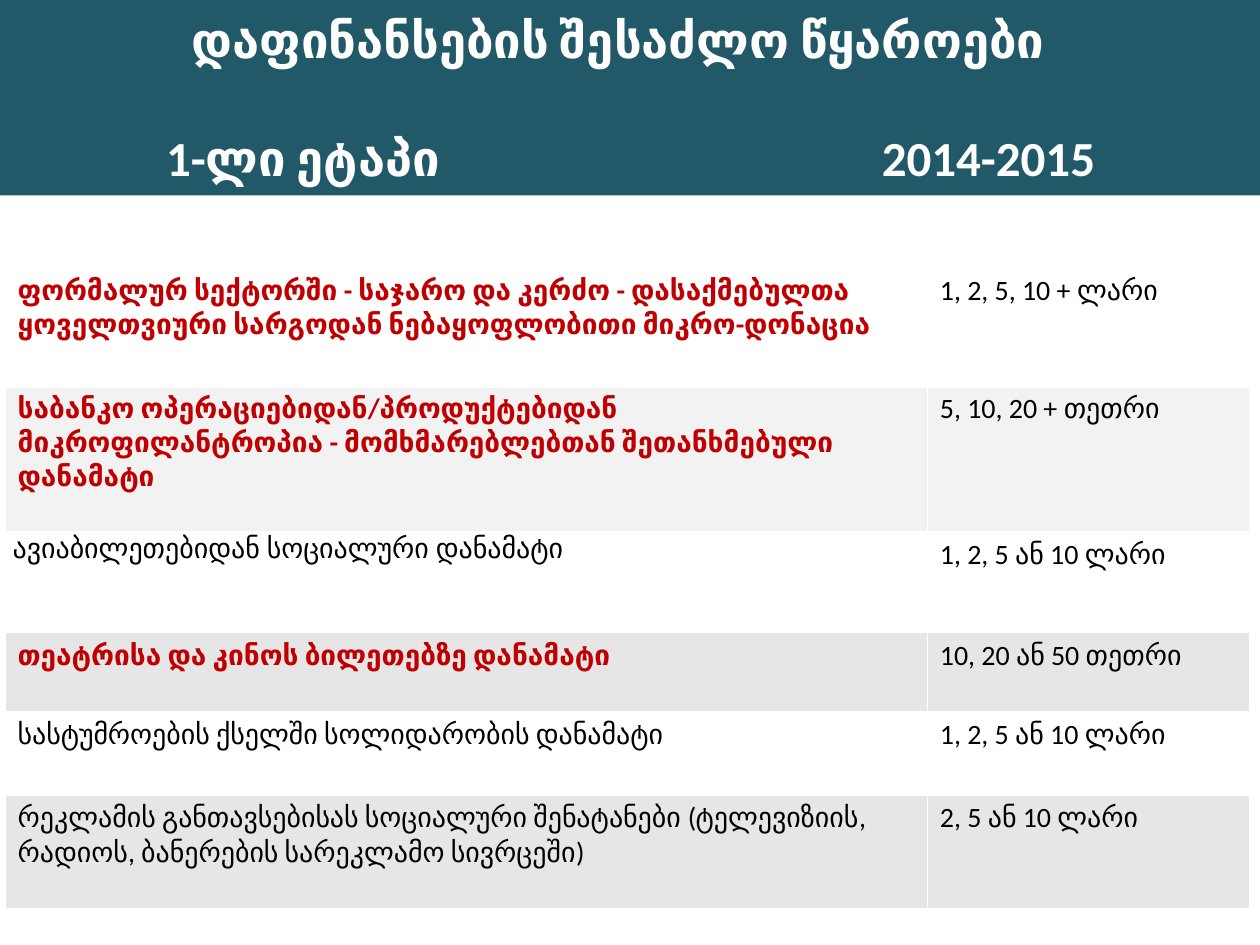
from dataclasses import dataclass

from lxml import etree
from pptx import Presentation
from pptx import util as u
from pptx.dml.color import RGBColor
from pptx.enum import shapes, text
from pptx.oxml import ns

WHITE = RGBColor(0xFF, 0xFF, 0xFF)
BLACK = RGBColor(0, 0, 0)
TEAL = RGBColor(0x21, 0x59, 0x68)
RED = RGBColor(0xC0, 0, 0)
PALE = RGBColor(0xF2, 0xF2, 0xF2)
GREY = RGBColor(0xE6, 0xE6, 0xE6)

COLUMN_WIDTHS = (7.32, 2.56)
TAB_STOPS = (1.22, 6.9)


@dataclass
class Source:
    name: str
    amount: str
    height: float
    fill: RGBColor = WHITE
    key: bool = False
    font: str = "Calibri"
    tight: bool = False


SOURCES = [
    Source("ფორმალურ სექტორში - საჯარო და კერძო - დასაქმებულთა ყოველთვიური სარგოდან "
           "ნებაყოფლობითი მიკრო-დონაცია", "1, 2, 5, 10 + ლარი", 0.94, key=True),
    Source("საბანკო ოპერაციებიდან/პროდუქტებიდან მიკროფილანტროპია - მომხმარებლებთან "
           "შეთანხმებული დანამატი", "5, 10, 20 + თეთრი", 1.16, PALE, key=True),
    Source("ავიაბილეთებიდან სოციალური დანამატი", "1, 2, 5 ან 10 ლარი", 0.8,
           font="Roboto", tight=True),
    Source("თეატრისა და კინოს ბილეთებზე დანამატი", "10, 20 ან 50 თეთრი", 0.63, GREY, key=True),
    Source("სასტუმროების ქსელში სოლიდარობის დანამატი", "1, 2, 5 ან 10 ლარი", 0.66),
    Source("რეკლამის განთავსებისას სოციალური შენატანები (ტელევიზიის, რადიოს, ბანერების "
           "სარეკლამო სივრცეში)", "2, 5 ან 10 ლარი", 0.9, GREY),
]


def style_runs(paragraph, size: int, color: RGBColor, bold: bool, font: str = "Calibri") -> None:
    for run in paragraph.runs:
        run.font.size = u.Pt(size)
        run.font.color.rgb = color
        run.font.bold = bold
        run.font.name = font


def add_borders(cell, bottom_width: int) -> None:
    properties = cell._tc.get_or_add_tcPr()
    widths = {"a:lnL": 1, "a:lnR": 1, "a:lnT": 1, "a:lnB": bottom_width}
    for position, (side, width) in enumerate(widths.items()):
        border = etree.Element(ns.qn(side), w=str(u.Pt(width)))
        fill = etree.SubElement(border, ns.qn("a:solidFill"))
        etree.SubElement(fill, ns.qn("a:srgbClr"), val=str(WHITE))
        properties.insert(position, border)


def fill_cell(cell, wording: str, source: Source, key: bool, font: str, bottom_width: int) -> None:
    cell.text_frame.text = wording
    style_runs(cell.text_frame.paragraphs[0], 16, RED if key else BLACK, key, font)
    cell.fill.solid()
    cell.fill.fore_color.rgb = source.fill
    add_borders(cell, bottom_width)


def add_sources(slide) -> None:
    frame = slide.shapes.add_table(
        len(SOURCES), len(COLUMN_WIDTHS), u.Inches(0.04), u.Inches(2.12),
        u.Inches(sum(COLUMN_WIDTHS)), u.Inches(sum(s.height for s in SOURCES)))
    table = frame.table
    table.first_row = table.horz_banding = False
    for column, width in zip(table.columns, COLUMN_WIDTHS):
        column.width = u.Inches(width)
    for index, source in enumerate(SOURCES):
        table.rows[index].height = u.Inches(source.height)
        bottom_width = 3 if index == 0 else 1
        name, amount = table.rows[index].cells
        fill_cell(name, source.name, source, source.key, source.font, bottom_width)
        fill_cell(amount, source.amount, source, False, "Calibri", bottom_width)
        if source.tight:
            name.margin_left = u.Inches(0.06)
            name.margin_top = name.margin_right = u.Inches(0.01)
            name.margin_bottom = 0


def add_header(slide) -> None:
    header = slide.shapes.add_shape(
        shapes.MSO_SHAPE.RECTANGLE, 0, 0, u.Inches(10), u.Inches(1.55))
    header.shadow.inherit = False
    header.fill.solid()
    header.fill.fore_color.rgb = TEAL
    header.line.fill.background()
    frame = header.text_frame
    frame.word_wrap = True
    frame.vertical_anchor = text.MSO_ANCHOR.MIDDLE
    frame.margin_right = u.Inches(0.29)
    frame.text = "დაფინანსების შესაძლო წყაროები"
    title = frame.paragraphs[0]
    title.alignment = text.PP_ALIGN.CENTER
    stage = frame.add_paragraph()
    stage.text = "\t1-ლი ეტაპი\t2014-2015"
    stage.alignment = text.PP_ALIGN.LEFT
    stage.space_before = u.Pt(34)
    tabs = etree.SubElement(stage._p.get_or_add_pPr(), ns.qn("a:tabLst"))
    for stop in TAB_STOPS:
        etree.SubElement(tabs, ns.qn("a:tab"), pos=str(u.Inches(stop)), algn="l")
    for paragraph in (title, stage):
        style_runs(paragraph, 28, WHITE, True)


def main() -> None:
    deck = Presentation()
    deck.slide_width, deck.slide_height = u.Inches(10), u.Inches(7.5)
    slide = deck.slides.add_slide(deck.slide_layouts[6])
    add_sources(slide)
    add_header(slide)
    deck.save("out.pptx")


if __name__ == "__main__":
    main()
